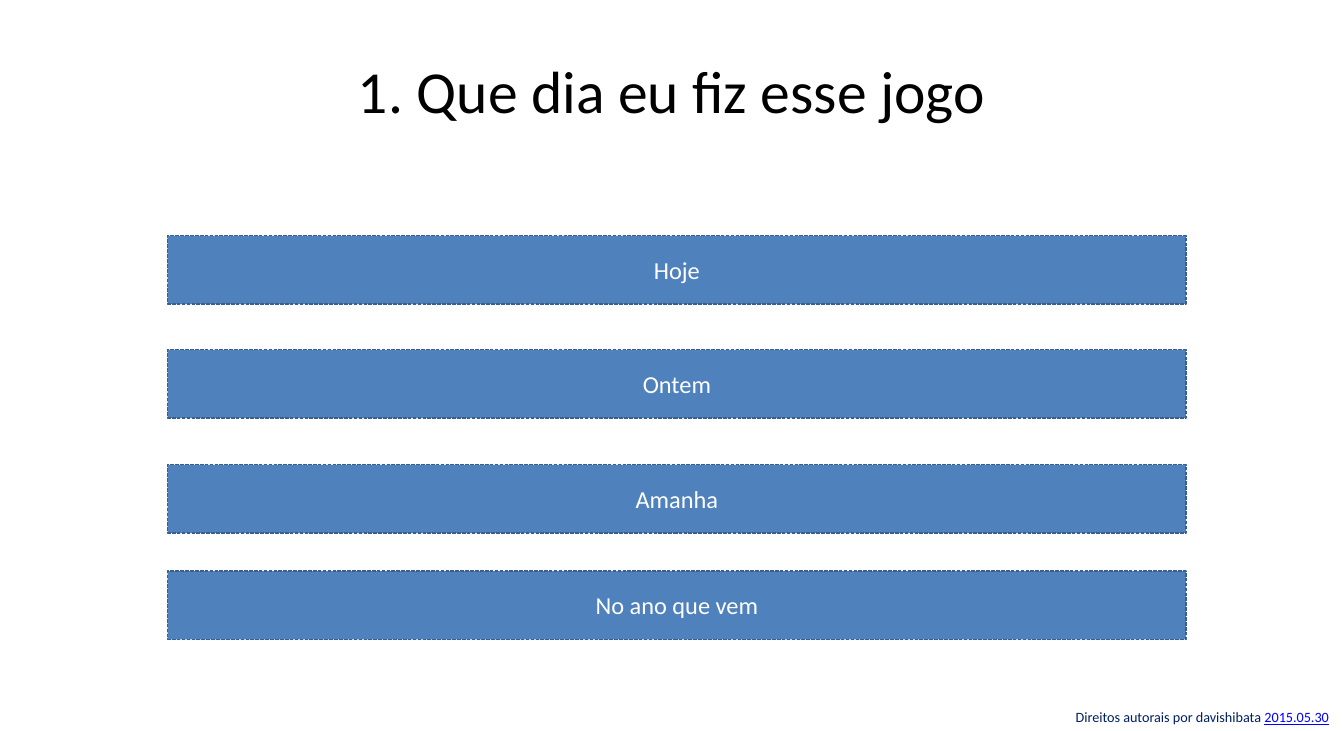
from pptx import Presentation
from pptx.dml.color import RGBColor
from pptx.enum.dml import MSO_LINE
from pptx.enum.shapes import MSO_SHAPE
from pptx.enum.text import MSO_ANCHOR, PP_ALIGN
from pptx.util import Inches, Pt

RECTANGLE = MSO_SHAPE.RECTANGLE
DASHED = MSO_LINE.SQUARE_DOT
MIDDLE = MSO_ANCHOR.MIDDLE
CENTER, LEFT = PP_ALIGN.CENTER, PP_ALIGN.LEFT

FONT = "Calibri"
COLORS = {
    "title": "000000",
    "answer": "4F81BD",
    "border": "3A5F8C",
    "answer_text": "FFFFFF",
    "credit": "002060",
    "date": "0000FF",
}
ANSWERS = [("Hoje", 2.42), ("Ontem", 3.59), ("Amanha", 4.77), ("No ano que vem", 5.86)]


def rgb(name):
    return RGBColor.from_string(COLORS[name])


def add_text(frame, text, *, size, color, align=CENTER, underline=None):
    """Append a formatted run to the first paragraph of a text frame."""
    paragraph = frame.paragraphs[0]
    paragraph.alignment = align
    run = paragraph.add_run()
    run.text = text
    run.font.name = FONT
    run.font.size = Pt(size)
    run.font.color.rgb = rgb(color)
    run.font.underline = underline


def add_question(slide, text):
    question = slide.shapes.title
    question.left, question.top = Inches(0.69), Inches(0.3)
    question.width, question.height = Inches(12.4), Inches(1.25)
    question.text_frame.vertical_anchor = MIDDLE
    add_text(question.text_frame, text, size=44, color="title")


def add_answer(slide, text, top):
    answer = slide.shapes.add_shape(
        RECTANGLE, Inches(1.72), Inches(top), Inches(10.44), Inches(0.7))
    answer.shadow.inherit = False
    answer.fill.solid()
    answer.fill.fore_color.rgb = rgb("answer")
    answer.line.color.rgb = rgb("border")
    answer.line.width = Pt(0.9)
    answer.line.dash_style = DASHED
    answer.text_frame.vertical_anchor = MIDDLE
    add_text(answer.text_frame, text, size=18, color="answer_text")


def add_credit(slide, author, date):
    credit = slide.shapes.add_textbox(
        Inches(10.93), Inches(7.22), Inches(2.85), Inches(0.28))
    frame = credit.text_frame
    frame.word_wrap = False
    add_text(frame, author, size=10.5, color="credit", align=LEFT)
    add_text(frame, date, size=10.5, color="date", align=LEFT, underline=True)


def main():
    prs = Presentation()
    prs.slide_width, prs.slide_height = Inches(13.78), Inches(7.5)
    slide = prs.slides.add_slide(prs.slide_layouts[5])

    # Question
    add_question(slide, "1. Que dia eu fiz esse jogo")

    # Answer buttons
    for text, top in ANSWERS:
        add_answer(slide, text, top)

    # Copyright line
    add_credit(slide, "Direitos autorais por davishibata ", "2015.05.30")

    prs.save("out.pptx")


if __name__ == "__main__":
    main()
